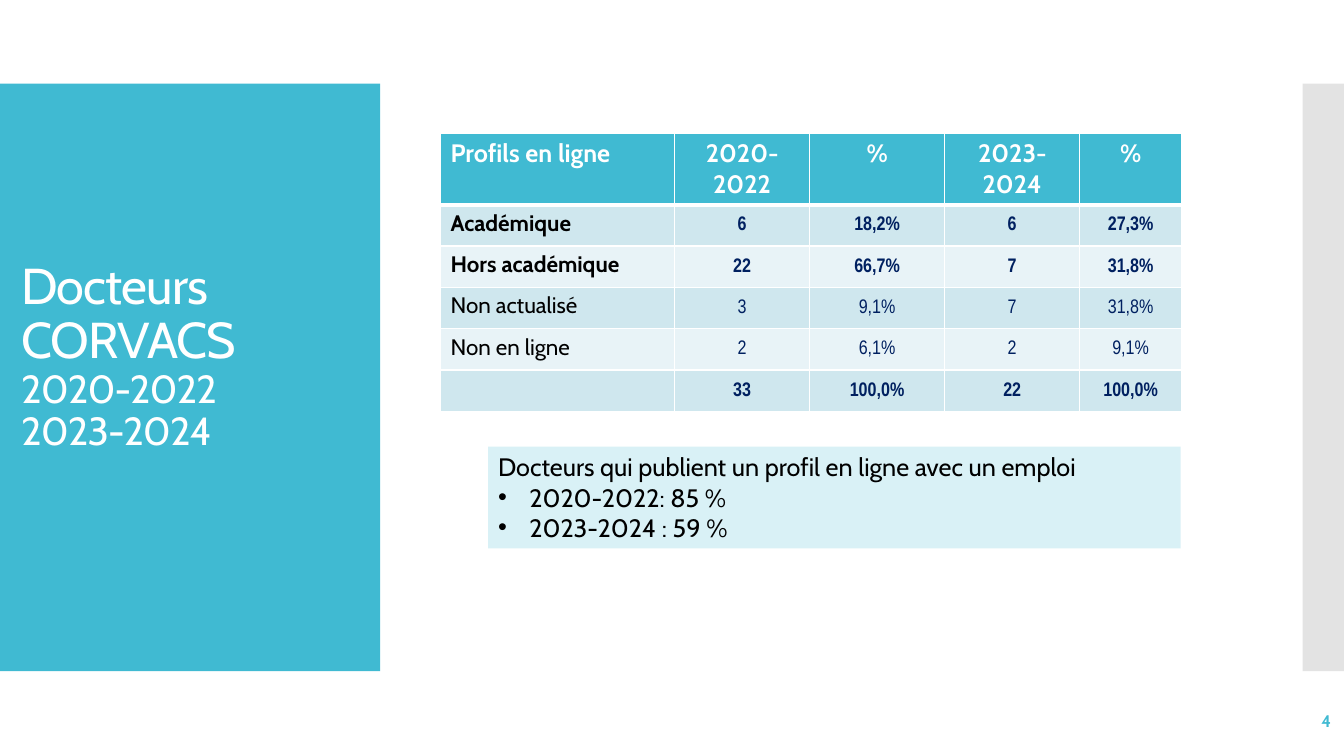
from dataclasses import dataclass

from lxml import etree
from pptx import Presentation
from pptx.dml.color import RGBColor
from pptx.enum.shapes import MSO_SHAPE
from pptx.enum.text import MSO_ANCHOR, MSO_AUTO_SIZE, PP_ALIGN
from pptx.oxml.ns import qn
from pptx.util import Inches, Pt

RECTANGLE = MSO_SHAPE.RECTANGLE
MIDDLE, TOP = MSO_ANCHOR.MIDDLE, MSO_ANCHOR.TOP
LEFT, CENTER, RIGHT = PP_ALIGN.LEFT, PP_ALIGN.CENTER, PP_ALIGN.RIGHT
NO_AUTOFIT = MSO_AUTO_SIZE.NONE


@dataclass(frozen=True)
class Theme:
    """Colours, fonts and type sizes of the slide."""
    accent: str = "40BAD2"
    side: str = "C8C8C8"
    white: str = "FFFFFF"
    ink: str = "000000"
    figure: str = "002060"
    bands: tuple = ("CFE7EE", "E8F3F7")
    callout: str = "D9F1F6"
    font: str = "Cabin"
    figure_font: str = "Arial Narrow"
    title_size: int = 36
    period_size: int = 28
    text_size: int = 18
    label_size: int = 16
    figure_size: int = 14
    number_size: int = 12


THEME = Theme()
HEADINGS = ["Profils en ligne", "2020-2022", "%", "2023-2024", "%"]
PROFILES = [
    (["Académique", "6", "18,2%", "6", "27,3%"], True),
    (["Hors académique", "22", "66,7%", "7", "31,8%"], True),
    (["Non actualisé", "3", "9,1%", "7", "31,8%"], False),
    (["Non en ligne", "2", "6,1%", "2", "9,1%"], False),
    (["", "33", "100,0%", "22", "100,0%"], True),
]
COLUMN_WIDTHS = [2.32, 1.34, 1.34, 1.34, 1.01]
HEADER_HEIGHT, ROW_HEIGHT = 0.36, 0.41


def write(paragraph, text, *, size, color=THEME.ink, font=THEME.font, bold=False,
          align=LEFT, line_spacing=1.0, tracking=0):
    """Add formatted text to a paragraph."""
    paragraph.alignment = align
    paragraph.line_spacing = line_spacing
    paragraph.space_before = paragraph.space_after = Pt(0)
    run = paragraph.add_run()
    run.text = text
    run.font.size = Pt(size)
    run.font.name = font
    run.font.bold = bold
    run.font.color.rgb = RGBColor.from_string(color)
    if tracking:
        run.font._element.set("spc", str(tracking))


def place(shape, left, top, width, height):
    """Move and size a shape, in inches."""
    shape.left, shape.top = Inches(left), Inches(top)
    shape.width, shape.height = Inches(width), Inches(height)


def next_paragraph(frame, index):
    """Return the first paragraph, or a new one after it."""
    return frame.add_paragraph() if index else frame.paragraphs[0]


def set_bullet(paragraph, character, indent):
    """Give a paragraph a hanging bullet, or none."""
    properties = paragraph._p.get_or_add_pPr()
    properties.set("marL", str(Inches(indent)))
    properties.set("indent", str(-Inches(indent)))
    if character:
        etree.SubElement(properties, qn("a:buFont"), typeface="Arial")
        etree.SubElement(properties, qn("a:buChar"), char=character)
    else:
        etree.SubElement(properties, qn("a:buNone"))


def add_panel(slide, left, width, color, opacity=100):
    """Add a vertical panel behind the rest of the slide."""
    panel = slide.shapes.add_shape(
        RECTANGLE, Inches(left), Inches(0.83), Inches(width), Inches(5.83))
    panel.shadow.inherit = False
    panel.line.fill.background()
    panel.fill.solid()
    panel.fill.fore_color.rgb = RGBColor.from_string(color)
    if opacity < 100:
        tint = panel._element.spPr.find(".//" + qn("a:srgbClr"))
        etree.SubElement(tint, qn("a:alpha"), val=str(opacity * 1000))
    slide.shapes._spTree.insert(2, panel._element)


def fill_title(title):
    """Place and write the title with its two periods."""
    place(title, 0.11, 1.23, 3.77, 5.03)
    frame = title.text_frame
    frame.word_wrap = True
    frame.auto_size = NO_AUTOFIT
    frame.vertical_anchor = MIDDLE
    frame.margin_bottom = Inches(0.45)
    lines = [("Docteurs CORVACS", THEME.title_size),
             ("2020-2022", THEME.period_size), ("2023-2024", THEME.period_size)]
    for index, (text, size) in enumerate(lines):
        write(next_paragraph(frame, index), text, size=size, color=THEME.white,
              line_spacing=0.9, tracking=-60)


def style_cell(cell, color, bottom_width=1):
    """Give a table cell white borders and a fill."""
    properties = cell._tc.get_or_add_tcPr()
    for side, width in (("L", 1), ("R", 1), ("T", 1), ("B", bottom_width)):
        border = etree.SubElement(properties, qn(f"a:ln{side}"), w=str(Pt(width)))
        fill = etree.SubElement(border, qn("a:solidFill"))
        etree.SubElement(fill, qn("a:srgbClr"), val=THEME.white)
    cell.fill.solid()
    cell.fill.fore_color.rgb = RGBColor.from_string(color)


def write_figure(cell, text, bold):
    """Write a centred figure in a cell with narrow margins."""
    cell.vertical_anchor = MIDDLE
    cell.margin_left = cell.margin_right = cell.margin_top = Inches(0.01)
    cell.margin_bottom = Inches(0)
    write(cell.text_frame.paragraphs[0], text, size=THEME.figure_size,
          color=THEME.figure, font=THEME.figure_font, bold=bold, align=CENTER)


def add_profile_table(slide):
    """Add the table of profiles by period."""
    height = HEADER_HEIGHT + ROW_HEIGHT * len(PROFILES)
    table = slide.shapes.add_table(
        len(PROFILES) + 1, len(HEADINGS), Inches(4.37), Inches(1.32),
        Inches(sum(COLUMN_WIDTHS)), Inches(height)).table
    for column, width in zip(table.columns, COLUMN_WIDTHS):
        column.width = Inches(width)
    for index, row in enumerate(table.rows):
        row.height = Inches(ROW_HEIGHT if index else HEADER_HEIGHT)
    for column, heading in enumerate(HEADINGS):
        cell = table.cell(0, column)
        style_cell(cell, THEME.accent, bottom_width=3)
        write(cell.text_frame.paragraphs[0], heading, size=THEME.text_size,
              color=THEME.white, bold=True, align=CENTER if column else LEFT)
    for index, (values, bold) in enumerate(PROFILES):
        for column, value in enumerate(values):
            cell = table.cell(index + 1, column)
            style_cell(cell, THEME.bands[index % 2])
            if column:
                write_figure(cell, value, bold)
            elif value:
                write(cell.text_frame.paragraphs[0], value,
                      size=THEME.label_size, bold=bold)


def fill_callout(body):
    """Place and write the list of employment rates."""
    place(body, 4.84, 4.43, 6.87, 1.01)
    body.fill.solid()
    body.fill.fore_color.rgb = RGBColor.from_string(THEME.callout)
    frame = body.text_frame
    frame.word_wrap = True
    frame.auto_size = NO_AUTOFIT
    frame.vertical_anchor = TOP
    lines = [("Docteurs qui publient un profil en ligne avec un emploi", "", 0),
             ("2020-2022: 85 %", "•", 0.31), ("2023-2024 : 59 %", "•", 0.31)]
    for index, (text, bullet, indent) in enumerate(lines):
        paragraph = next_paragraph(frame, index)
        write(paragraph, text, size=THEME.text_size)
        set_bullet(paragraph, bullet, indent)


def add_page_number(slide, number):
    """Add the page number at the bottom right."""
    frame = slide.shapes.add_textbox(
        Inches(11.63), Inches(6.95), Inches(1.67), Inches(0.4)).text_frame
    frame.word_wrap = True
    frame.vertical_anchor = MIDDLE
    write(frame.paragraphs[0], number, size=THEME.number_size,
          color=THEME.accent, bold=True, align=RIGHT)


def main():
    """Build the slide and save it."""
    deck = Presentation()
    deck.slide_width, deck.slide_height = Inches(13.33), Inches(7.5)
    slide = deck.slides.add_slide(deck.slide_layouts[1])
    add_panel(slide, 0, 3.77, THEME.accent)
    add_panel(slide, 12.92, 0.41, THEME.side, opacity=50)
    fill_title(slide.shapes.title)
    add_profile_table(slide)
    fill_callout(slide.placeholders[1])
    add_page_number(slide, "4")
    deck.save("out.pptx")


if __name__ == "__main__":
    main()
